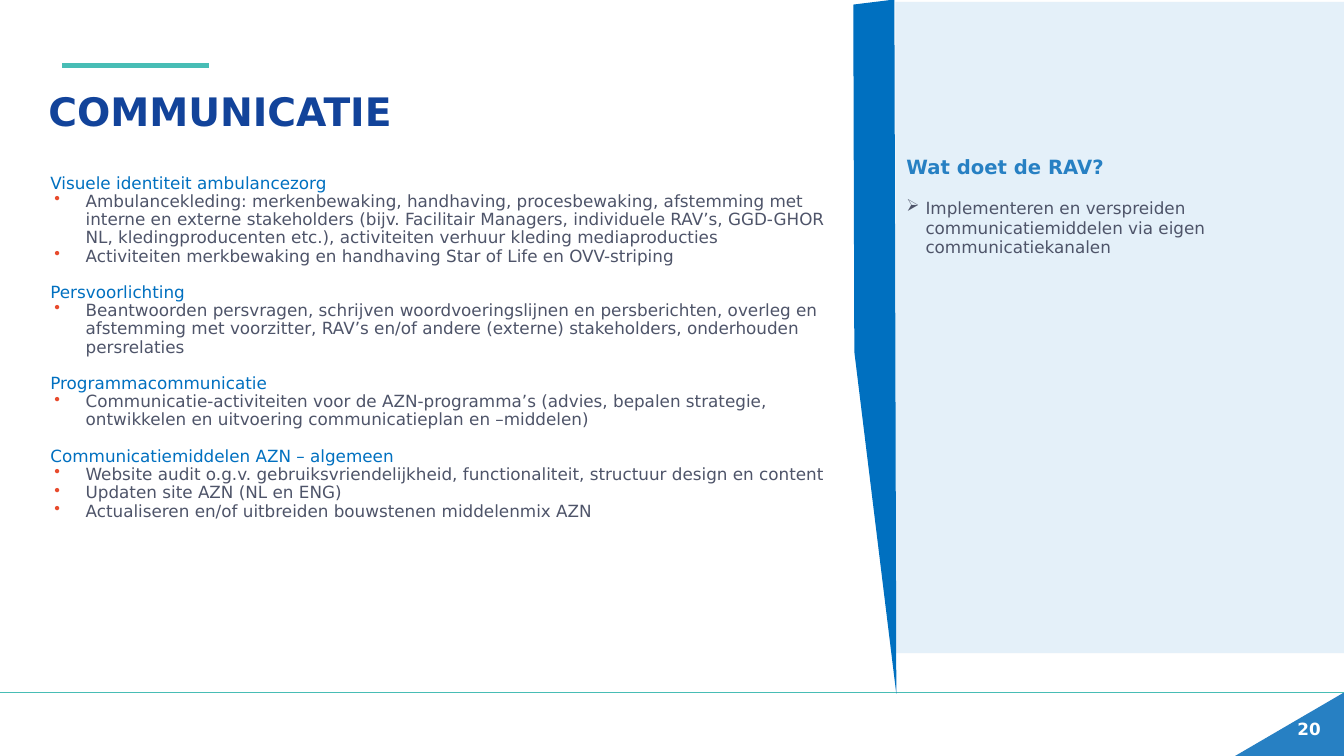
from lxml import etree
from pptx import Presentation
from pptx.dml import color
from pptx.enum import shapes, text
from pptx.oxml import ns
from pptx.util import Inches, Pt

FONT = "DejaVu Sans"
NAVY, BLUE, MID_BLUE, PALE_BLUE = "12439A", "0070C0", "2780C3", "D1E6F6"
TEAL, GREY, RED, WHITE = "48BDB5", "4E5469", "E84B2D", "FFFFFF"

TOPICS = [
    ("Visuele identiteit ambulancezorg", [
        "Ambulancekleding: merkenbewaking, handhaving, procesbewaking, afstemming met interne en "
        "externe stakeholders (bijv. Facilitair Managers, individuele RAV’s, GGD-GHOR NL, "
        "kledingproducenten etc.), activiteiten verhuur kleding mediaproducties",
        "Activiteiten merkbewaking en handhaving Star of Life en OVV-striping"]),
    ("Persvoorlichting", [
        "Beantwoorden persvragen, schrijven woordvoeringslijnen en persberichten, overleg en "
        "afstemming met voorzitter, RAV’s en/of andere (externe) stakeholders, onderhouden "
        "persrelaties"]),
    ("Programmacommunicatie", [
        "Communicatie-activiteiten voor de AZN-programma’s (advies, bepalen strategie, "
        "ontwikkelen en uitvoering communicatieplan en –middelen)"]),
    ("Communicatiemiddelen AZN – algemeen", [
        "Website audit o.g.v. gebruiksvriendelijkheid, functionaliteit, structuur design en content",
        "Updaten site AZN (NL en ENG)",
        "Actualiseren en/of uitbreiden bouwstenen middelenmix AZN"]),
]


def rgb(value):
    return color.RGBColor.from_string(value)


def add_xml(parent, tag, **attributes):
    return etree.SubElement(parent, ns.qn(tag), attributes)


class SlideBuilder:
    def __init__(self, slide, font):
        self.slide = slide
        self.font = font

    def frame(self, shape, margins=(0, 0, 0, 0)):
        """Prepare a wrapped, top-aligned text frame; margins are left, top, right, bottom."""
        frame = shape.text_frame
        sides = ("margin_left", "margin_top", "margin_right", "margin_bottom")
        settings = dict(zip(sides, map(Inches, margins)))
        settings.update(word_wrap=True, auto_size=text.MSO_AUTO_SIZE.NONE,
                        vertical_anchor=text.MSO_ANCHOR.TOP)
        for name, value in settings.items():
            setattr(frame, name, value)
        return frame

    def paragraph(self, frame, content, size, ink, bold=False, left=0, hanging=0,
                  bullet=None, bullet_ink=None, **spacing):
        """Write into the empty first paragraph, or add one after it."""
        line = frame.add_paragraph() if frame.text else frame.paragraphs[0]
        properties = line._p.get_or_add_pPr()
        properties.set("marL", str(Inches(left)))
        properties.set("indent", str(-Inches(hanging)))
        if bullet:
            if bullet_ink:
                add_xml(add_xml(properties, "a:buClr"), "a:srgbClr", val=bullet_ink)
            add_xml(properties, "a:buChar", char=bullet)
        line.alignment = text.PP_ALIGN.LEFT
        for name, value in spacing.items():
            setattr(line, name, value)
        run = line.add_run()
        run.text = content
        for name, value in {"name": self.font, "size": Pt(size), "bold": bold}.items():
            setattr(run.font, name, value)
        run.font.color.rgb = rgb(ink)

    def title(self, content, box):
        title = self.slide.shapes.title
        title.left, title.top, title.width, title.height = map(Inches, box)
        self.paragraph(self.frame(title), content, 28, NAVY, bold=True, line_spacing=0.9)

    def textbox(self, box, margins=(0, 0, 0, 0)):
        return self.frame(self.slide.shapes.add_textbox(*map(Inches, box)), margins)

    def paint(self, shape, fill):
        shape.shadow.inherit = False
        shape.fill.solid()
        shape.fill.fore_color.rgb = rgb(fill)
        shape.line.fill.background()
        return shape

    def shape(self, kind, box, fill, opacity=100):
        shape = self.paint(self.slide.shapes.add_shape(kind, *map(Inches, box)), fill)
        if opacity < 100:
            fill_color = shape._element.spPr.find(".//" + ns.qn("a:srgbClr"))
            add_xml(fill_color, "a:alpha", val=str(opacity * 1000))
        return shape

    def polygon(self, points, fill):
        corners = [(Inches(x), Inches(y)) for x, y in points]
        builder = self.slide.shapes.build_freeform(*corners[0])
        builder.add_line_segments(corners[1:], close=True)
        return self.paint(builder.convert_to_shape(), fill)

    def rule(self, left, right, y, weight):
        """Draw a horizontal teal line."""
        rule = self.slide.shapes.add_connector(
            shapes.MSO_CONNECTOR.STRAIGHT, *map(Inches, (left, y, right, y)))
        rule.line.color.rgb = rgb(TEAL)
        rule.line.width = Pt(weight)
        add_xml(rule._element.spPr, "a:effectLst")


def main():
    deck = Presentation()
    deck.slide_width, deck.slide_height = Inches(13.33), Inches(7.5)
    page = SlideBuilder(deck.slides.add_slide(deck.slide_layouts[5]), FONT)

    page.polygon([(13.33, 7.5), (13.33, 6.87), (12.25, 7.5)], MID_BLUE)
    page.rule(0.62, 2.07, 0.65, 3.75)
    page.rule(0, 13.33, 6.87, 0.75)
    page.title("COMMUNICATIE", (0.48, 0.92, 6.06, 0.42))

    panel = page.shape(shapes.MSO_SHAPE.RECTANGLE, (8.88, 0.02, 4.46, 6.46), PALE_BLUE, opacity=58)
    role = page.frame(panel, (0, 1.56, 0, 0))
    page.paragraph(role, "Wat doet de RAV?", 14, MID_BLUE, bold=True, left=0.11,
                   line_spacing=Pt(14))
    page.paragraph(role, "Implementeren en verspreiden communicatiemiddelen via eigen "
                   "communicatiekanalen", 12, GREY, left=0.3, hanging=0.19, bullet="➢",
                   line_spacing=Pt(14), space_before=Pt(14))

    topics = page.textbox((0.34, 1.73, 8.13, 5.5))
    for number, (heading, activities) in enumerate(TOPICS):
        page.paragraph(topics, heading, 12, BLUE, left=0.16, line_spacing=Pt(13),
                       space_before=Pt(13 if number else 0))
        for activity in activities:
            page.paragraph(topics, activity, 12, GREY, left=0.51, hanging=0.31, bullet="•",
                           bullet_ink=RED, line_spacing=Pt(13), space_before=Pt(0))

    stripe = page.shape(shapes.MSO_SHAPE.DIAGONAL_STRIPE, (8.47, 0.02, 0.82, 6.84), BLUE)
    stripe.rotation = 353

    page_number = page.textbox((12.77, 7.08, 0.44, 0.3), (0.1, 0.05, 0.1, 0.05))
    page.paragraph(page_number, "20", 12, WHITE, bold=True)

    deck.save("out.pptx")


if __name__ == "__main__":
    main()
